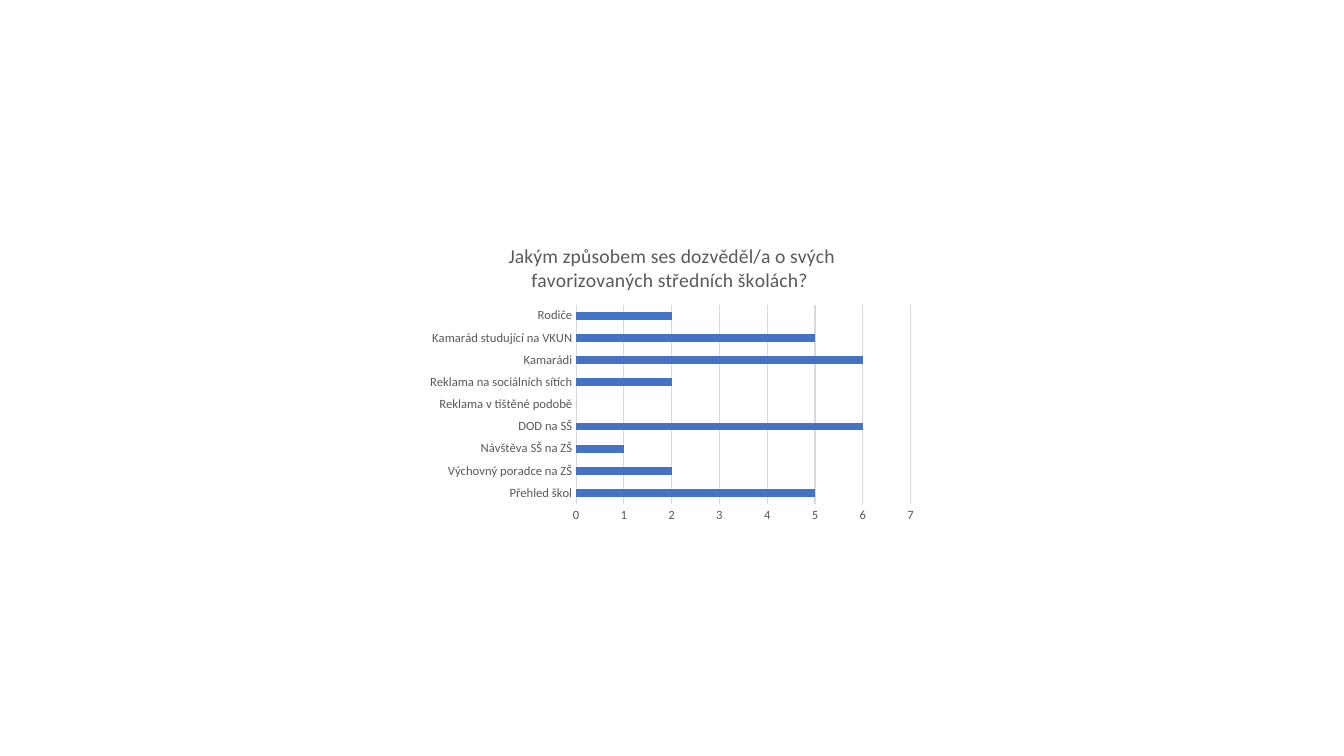
from pptx import Presentation
from pptx.chart.data import CategoryChartData
from pptx.dml.color import RGBColor
from pptx.enum.chart import XL_CHART_TYPE as ChartType, XL_TICK_MARK as Tick
from pptx.util import Emu, Pt

BLUE = RGBColor(0x44, 0x72, 0xC4)
GREY = RGBColor(0x59, 0x59, 0x59)
LIGHT = RGBColor(0xD9, 0xD9, 0xD9)
BLACK = RGBColor(0, 0, 0)
EMU_PER_PX = 914400 / 100.8

TITLE = "Jakým způsobem ses dozvěděl/a o svých favorizovaných středních školách? "
ANSWERS = {
    "Přehled škol": 5,
    "Výchovný poradce na ZŠ": 2,
    "Návštěva SŠ na ZŠ": 1,
    "DOD na SŠ": 6,
    "Reklama v tištěné podobě": 0,
    "Reklama na sociálních sítích": 2,
    "Kamarádi": 6,
    "Kamarád studující na VKUN": 5,
    "Rodiče": 2,
}


def px(n):
    return Emu(round(n * EMU_PER_PX))


class SlideBuilder:
    font_name = "Calibri"

    def __init__(self, prs):
        self.slide = prs.slides.add_slide(prs.slide_layouts[6])

    def style_font(self, font, size, color):
        font.name = self.font_name
        font.size = Pt(size)
        font.bold = False
        font.color.rgb = color

    def style_line(self, line):
        line.color.rgb = LIGHT
        line.width = Pt(0.75)

    def chart_title(self, chart, text):
        chart.has_title = True
        chart.chart_title.include_in_layout = False
        r = chart.chart_title.text_frame.paragraphs[0].add_run()
        r.text = text
        self.style_font(r.font, 14, GREY)

    def axis(self, axis):
        axis.major_tick_mark = axis.minor_tick_mark = Tick.NONE
        self.style_font(axis.tick_labels.font, 9, GREY)

    def bar_chart(self, x, y, w, h, title, values):
        data = CategoryChartData()
        data.categories = list(values)
        data.add_series("Series 1", list(values.values()))
        chart = self.slide.shapes.add_chart(
            ChartType.BAR_CLUSTERED, px(x), px(y), px(w), px(h), data).chart
        self.style_font(chart.font, 10, BLACK)
        chart.has_legend = False
        self.chart_title(chart, title)

        cat, val = chart.category_axis, chart.value_axis
        self.axis(cat)
        self.axis(val)
        self.style_line(cat.format.line)
        val.format.line.fill.background()
        val.has_major_gridlines = True
        self.style_line(val.major_gridlines.format.line)

        plot = chart.plots[0]
        plot.gap_width = 182
        plot.vary_by_categories = False
        fill = plot.series[0].format.fill
        fill.solid()
        fill.fore_color.rgb = BLUE


def main():
    prs = Presentation()
    prs.slide_width, prs.slide_height = px(1344), px(756)
    SlideBuilder(prs).bar_chart(420, 227, 504, 302, TITLE, ANSWERS)
    prs.save("out.pptx")


if __name__ == "__main__":
    main()
